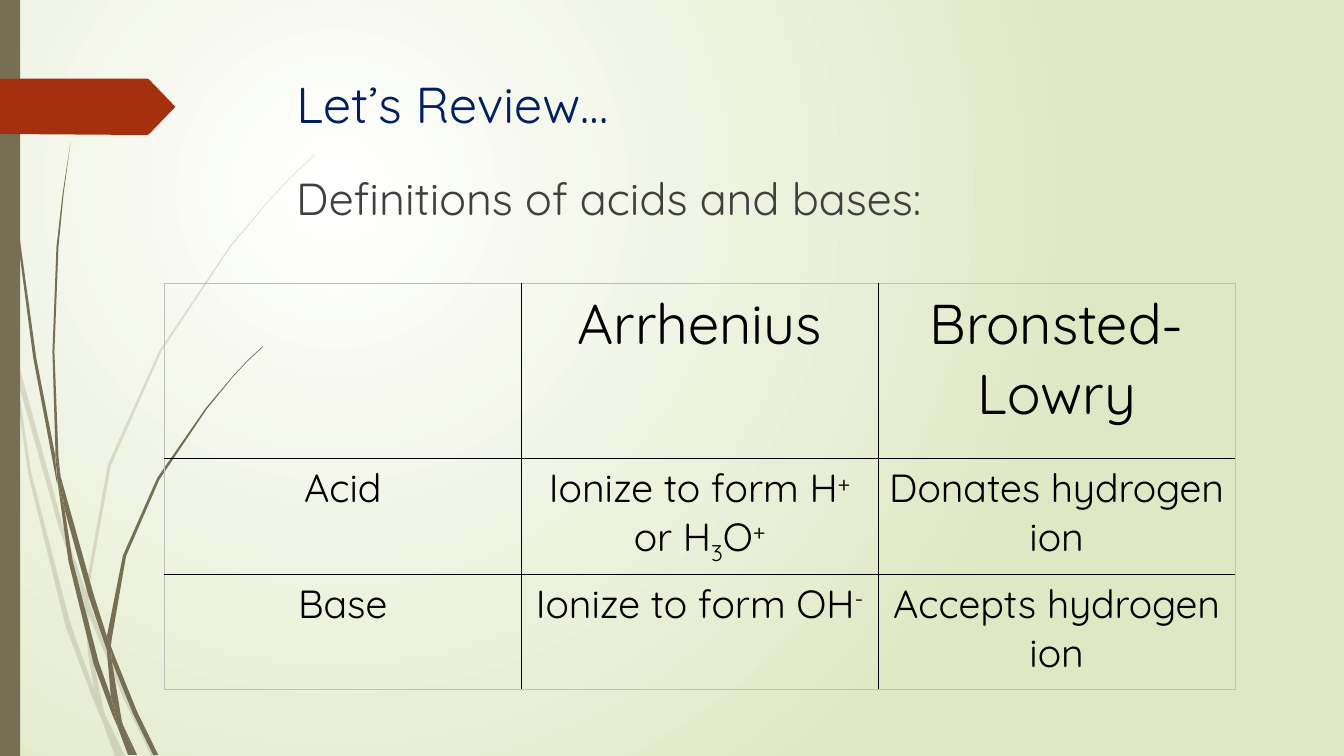
from lxml import etree
from pptx import Presentation
from pptx import util as u
from pptx.dml.color import RGBColor
from pptx.enum import shapes, text
from pptx.oxml import ns

OLIVE = RGBColor(0x76, 0x6F, 0x54)
RUST = RGBColor(0xA5, 0x30, 0x10)
NAVY = RGBColor(0x00, 0x20, 0x60)
CHARCOAL = RGBColor(0x40, 0x40, 0x40)
BLACK = RGBColor(0x00, 0x00, 0x00)
SILVER = RGBColor(0xBF, 0xBF, 0xBF)
WHITE = RGBColor(0xFF, 0xFF, 0xFF)
SAGE = RGBColor(0xDF, 0xE8, 0xC4)

COLUMNS, ROWS = 1333, 750
UNIT = u.Inches(0.01)
PLAIN_TABLE = "{2D5ABB26-0587-4C30-8999-92F81FD0307C}"

FAINT_STEMS = [
    [(11, 350), (9, 322), (0, 282), (0, 299), (10, 344)],
    [(58, 522), (84, 599), (85, 586), (62, 520), (14, 345), (17, 376)],
    [(92, 607), (88, 596), (88, 610), (123, 694), (150, 750), (155, 750), (127, 692)],
    [(119, 750), (124, 750), (105, 711)],
    [(93, 683), (70, 619), (31, 469), (17, 376), (11, 350), (28, 470), (65, 621),
     (92, 693), (101, 714), (99, 707)],
    [(84, 599), (87, 646), (93, 683), (96, 692), (105, 711), (103, 706), (91, 646),
     (88, 610), (88, 608)],
    [(88, 584), (110, 462), (160, 349), (229, 245), (268, 198), (290, 175), (312, 154),
     (312, 153), (289, 175), (268, 197), (228, 244), (158, 348), (107, 461), (85, 584),
     (85, 586), (88, 596)],
    [(101, 714), (114, 750), (119, 750)],
    [(88, 608), (88, 610), (88, 596), (85, 586), (84, 599)],
    [(96, 692), (93, 683), (99, 707), (101, 714), (119, 750), (105, 711)],
]
DARK_STEMS = [
    [(7, 110), (17, 233), (33, 355), (56, 477), (57, 481), (55, 457), (55, 453),
     (36, 355), (19, 232), (8, 109), (5, 48), (4, 0), (3, 0), (4, 48)],
    [(88, 592), (106, 645), (106, 631), (93, 590), (60, 472), (64, 505)],
    [(113, 649), (110, 641), (111, 656), (132, 708), (152, 749), (157, 749), (136, 706)],
    [(110, 691), (98, 657), (72, 556), (64, 505), (57, 477), (68, 557), (93, 659),
     (111, 708), (117, 722), (116, 717)],
    [(60, 472), (58, 453), (54, 349), (58, 245), (63, 193), (70, 141), (62, 193),
     (56, 245), (52, 349), (55, 449)],
    [(133, 749), (136, 749), (122, 719)],
    [(57, 477), (64, 505), (60, 472), (55, 449), (55, 453)],
    [(111, 633), (125, 552), (158, 476), (205, 406), (231, 374), (245, 359), (261, 344),
     (260, 344), (245, 358), (231, 373), (204, 405), (156, 474), (122, 551), (106, 631),
     (110, 641)],
    [(117, 722), (127, 749), (131, 749)],
    [(106, 645), (110, 691), (116, 706), (122, 719), (121, 716), (111, 656), (109, 651)],
    [(106, 645), (109, 651), (111, 656), (110, 641), (106, 631)],
    [(116, 706), (110, 691), (116, 717), (117, 722), (130, 749), (133, 749), (122, 719)],
]
TAG = [(174, 106), (148, 133), (146, 134), (0, 133), (0, 78), (146, 78), (148, 79)]

DEFINITIONS = [
    [[], [("Arrhenius", 0)], [("Bronsted-Lowry", 0)]],
    [[("Acid", 0)],
     [("Ionize to form H", 0), ("+ ", 30), ("or H", 0), ("3", -25), ("O", 0), ("+", 30)],
     [("Donates hydrogen ion", 0)]],
    [[("Base", 0)],
     [("Ionize to form OH", 0), ("-", 30)],
     [("Accepts hydrogen ion", 0)]],
]


def add_text(para, words, size=28, color=BLACK, font="Quicksand", baseline=0,
             align=text.PP_ALIGN.LEFT):
    para.alignment = align
    span = para.add_run()
    span.text = words
    span.font.size = u.Pt(size)
    span.font.name = font
    span.font.color.rgb = color
    if baseline:
        span.font._element.set("baseline", str(baseline * 1000))


def add_child(parent, tag, **attributes):
    return etree.SubElement(parent, ns.qn(tag), attributes)


class ReviewSlide:
    def __init__(self, deck):
        self.page = deck.slides.add_slide(deck.slide_layouts[5])

    def background(self, inner, outer):
        fill = self.page.background.fill
        fill.gradient()
        for stop, color in zip(fill.gradient_stops, (inner, outer)):
            stop.color.rgb = color
        gradient = fill._fill._gradFill
        gradient.remove(gradient.find(ns.qn("a:lin")))
        circle = add_child(gradient, "a:path", path="circle")
        add_child(circle, "a:fillToRect", l="50000", t="50000", r="100000", b="100000")

    def paint(self, shape, color, opacity=100):
        shape.shadow.inherit = False
        shape.fill.solid()
        shape.fill.fore_color.rgb = color
        shape.line.fill.background()
        if opacity < 100:
            tint = shape._element.spPr.find(".//" + ns.qn("a:srgbClr"))
            add_child(tint, "a:alpha", val=str(opacity * 1000))

    def outline(self, holder, points, color, opacity=100):
        builder = holder.build_freeform(*points[0], scale=UNIT)
        builder.add_line_segments(points[1:], close=True)
        self.paint(builder.convert_to_shape(), color, opacity)

    def stems(self, outlines, opacity=100):
        group = self.page.shapes.add_group_shape()
        for points in outlines:
            self.outline(group.shapes, points, OLIVE, opacity)

    def tag(self, points):
        self.outline(self.page.shapes, points, RUST)

    def bar(self, *area):
        box = self.page.shapes.add_shape(
            shapes.MSO_SHAPE.RECTANGLE, *(UNIT * n for n in area))
        self.paint(box, OLIVE)

    def fill_frame(self, box, words, **style):
        frame = box.text_frame
        frame.word_wrap = True
        frame.auto_size = text.MSO_AUTO_SIZE.NONE
        frame.vertical_anchor = text.MSO_ANCHOR.TOP
        add_text(frame.paragraphs[0], words, **style)

    def title(self, words, *area, **style):
        box = self.page.shapes.title
        box.left, box.top, box.width, box.height = (UNIT * n for n in area)
        self.page.shapes._spTree.append(box._element)
        self.fill_frame(box, words, **style)

    def body(self, words, *area, **style):
        box = self.page.shapes.add_textbox(*(UNIT * n for n in area))
        self.fill_frame(box, words, **style)

    def border(self, cell, side, color, width):
        properties = cell._tc.get_or_add_tcPr()
        line = add_child(properties, "a:" + side, w=str(u.Pt(width)))
        add_child(add_child(line, "a:solidFill"), "a:srgbClr", val=str(color))

    def table(self, content, left, top, column, heights):
        count = len(content[0])
        holder = self.page.shapes.add_table(
            len(content), count, UNIT * left, UNIT * top,
            UNIT * column * count, UNIT * sum(heights))
        table = holder.table
        table.first_row = table.horz_banding = False
        table._tbl.tblPr.find(ns.qn("a:tableStyleId")).text = PLAIN_TABLE
        for row, height in zip(table.rows, heights):
            row.height = UNIT * height
        for r, row in enumerate(content):
            for c, spans in enumerate(row):
                cell = table.cell(r, c)
                edges = {"lnL": c == 0, "lnR": c == count - 1,
                         "lnT": r == 0, "lnB": r == len(content) - 1}
                for side, outer in edges.items():
                    self.border(cell, side, SILVER if outer else BLACK, 0.5 if outer else 1)
                cell.fill.background()
                for words, baseline in spans:
                    add_text(cell.text_frame.paragraphs[0], words, size=28 if r else 40,
                             baseline=baseline, align=text.PP_ALIGN.CENTER)


def main():
    deck = Presentation()
    deck.slide_width, deck.slide_height = UNIT * COLUMNS, UNIT * ROWS
    review = ReviewSlide(deck)
    review.background(WHITE, SAGE)
    review.stems(FAINT_STEMS, opacity=20)
    review.stems(DARK_STEMS)
    review.bar(0, 0, 20, ROWS)
    review.tag(TAG)
    review.title("Let’s Review…", 284, 68, 975, 140, size=36, color=NAVY)
    review.body("Definitions of acids and bases:", 284, 164, 940, 424, size=32, color=CHARCOAL)
    review.table(DEFINITIONS, left=163, top=281, column=354, heights=[174, 115, 114])
    deck.save("out.pptx")


if __name__ == "__main__":
    main()
